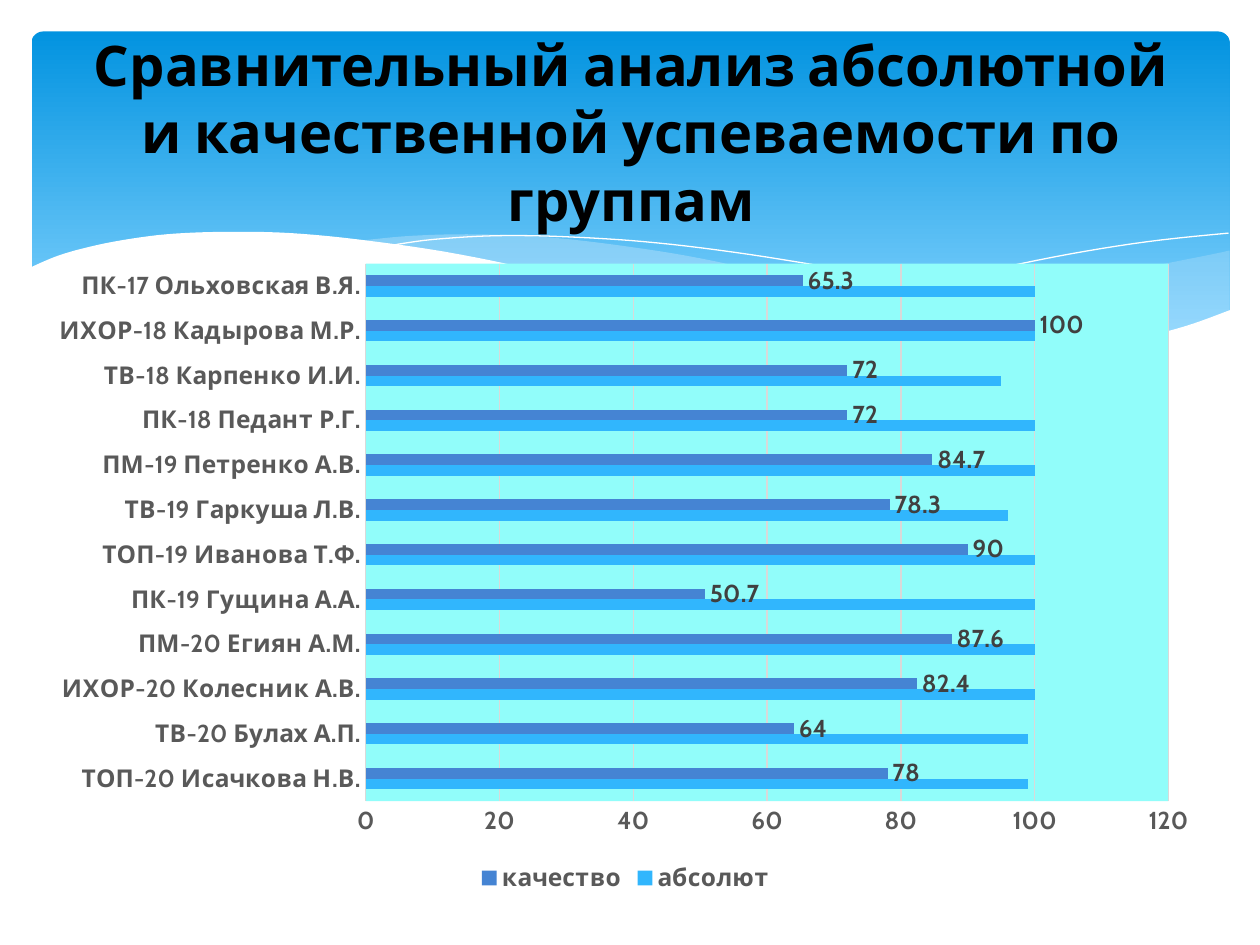
from lxml.etree import SubElement
from pptx import Presentation
from pptx.chart.data import CategoryChartData
from pptx.dml.color import RGBColor
from pptx.enum.chart import XL_CHART_TYPE, XL_LABEL_POSITION, XL_LEGEND_POSITION, XL_TICK_MARK
from pptx.enum.shapes import MSO_SHAPE
from pptx.enum.text import MSO_ANCHOR, PP_ALIGN
from pptx.oxml.ns import qn
from pptx.util import Pt


def rgb(code):
    return RGBColor.from_string(code)


def smooth(knots, steps=6):
    padded = [knots[0], *knots, knots[-1]]
    curve = [knots[0]]
    for a, b, c, d in zip(padded, padded[1:], padded[2:], padded[3:]):
        for step in range(1, steps + 1):
            t = step / steps
            curve.append(tuple(
                0.5 * (2 * q + (r - p) * t + (2 * p - 5 * q + 4 * r - s) * t ** 2
                       + (3 * q - p - 3 * r + s) * t ** 3)
                for p, q, r, s in zip(a, b, c, d)))
    return [(Pt(x), Pt(y)) for x, y in curve]


presentation = Presentation()
presentation.slide_width, presentation.slide_height = Pt(720), Pt(540)
slide = presentation.slides.add_slide(presentation.slide_layouts[5])
shapes = slide.shapes

banner = shapes.add_shape(MSO_SHAPE.ROUNDED_RECTANGLE, Pt(18), Pt(18), Pt(684.7), Pt(194.4))
banner.adjustments[0] = 0.034
banner.shadow.inherit = False
banner.line.fill.background()
banner.fill.gradient()
banner.fill.gradient_angle = 270
for stop, (position, color) in zip(banner.fill.gradient_stops, [(0, "0293E0"), (0.9, "83D3FE")]):
    stop.position = position
    stop.color.rgb = rgb(color)

right_crest = [(702, 143.3), (692, 145.5), (652, 153.5), (620, 160.5), (561, 174.3),
               (508, 185.2), (476, 190.8)]
right_trough = [(476, 190.8), (507, 195), (545, 198.8), (586, 200), (622, 198.8),
                (658, 194.5), (683, 188), (702.7, 177.8)]
middle_crest = [(643, 196.6), (603, 190.8), (533.5, 178.6), (453, 160), (410, 149.6),
                (370, 142.5), (318, 136), (273.6, 133.9), (236, 134.7), (206, 137.5)]
middle_trough = [(206, 137.5), (246, 143.3), (291, 152), (323, 159.8), (381.6, 172.8),
                 (432.7, 183.6), (479, 191.5), (520, 196.6), (556.5, 199.4),
                 (589, 200.2), (617, 199.4), (643, 196.6)]
left_thread = [(222.5, 140.4), (248, 136.8), (289, 134.6), (338, 136), (384, 139.7),
               (438, 146.9), (500, 157.7), (572, 173.5), (653, 195.8)]
right_thread = [(441, 185), (484, 173.5), (538.6, 160.5), (602, 146.9), (655, 138.2), (702, 133.2)]
front_crest = [(703.4, 177), (677, 186.5), (647.3, 193.7), (612, 198), (572.4, 199.2),
               (523, 197.3), (466, 190.8), (399.6, 180), (322, 158.4), (262.8, 145.4),
               (210, 137.5), (166, 133.2), (127, 132.5), (95, 133.9), (68.4, 137.5),
               (48, 141.8), (33, 146.2), (21, 151.2), (16.6, 153.4)]
front_base = [(16.6, 236.9), (703.4, 236.9)]

waves = [
    ([right_crest, right_trough, [(702.7, 143.3), (702, 143.3)]], "C6E7FC", 29),
    ([middle_crest, middle_trough], "C6E7FC", 40),
    ([left_thread], None, None),
    ([right_thread], None, None),
    ([front_crest, front_base], "FFFFFF", 100),
]
for curves, color, opacity in waves:
    outline = [point for curve in curves for point in smooth(curve)]
    builder = shapes.build_freeform(*outline[0])
    builder.add_line_segments(outline[1:], close=color is not None)
    wave = builder.convert_to_shape()
    wave.shadow.inherit = False
    if color is None:
        wave.fill.background()
        wave.line.color.rgb = rgb("FFFFFF")
        wave.line.width = Pt(0)
        continue
    wave.line.fill.background()
    wave.fill.solid()
    wave.fill.fore_color.rgb = rgb(color)
    if opacity < 100:
        tint = wave.fill._xPr.find(qn("a:solidFill"))[0]
        SubElement(tint, qn("a:alpha"), val=str(opacity * 1000))

heading = shapes.title
shapes._spTree.append(heading._element)
heading.left, heading.top, heading.width, heading.height = Pt(36.7), Pt(25.9), Pt(648), Pt(98.6)
heading.text_frame.text = "Сравнительный анализ абсолютной и качественной успеваемости по группам"
heading.text_frame.word_wrap = True
heading.text_frame.vertical_anchor = MSO_ANCHOR.MIDDLE
heading.text_frame.paragraphs[0].alignment = PP_ALIGN.CENTER

results = [
    ("ТОП-20 Исачкова Н.В.", 99, 78),
    ("ТВ-20 Булах А.П.", 99, 64),
    ("ИХОР-20 Колесник А.В.", 100, 82.4),
    ("ПМ-20 Егиян А.М.", 100, 87.6),
    ("ПК-19 Гущина А.А.", 100, 50.7),
    ("ТОП-19 Иванова Т.Ф.", 100, 90),
    ("ТВ-19 Гаркуша Л.В.", 96, 78.3),
    ("ПМ-19 Петренко А.В.", 100, 84.7),
    ("ПК-18 Педант Р.Г.", 100, 72),
    ("ТВ-18 Карпенко И.И.", 95, 72),
    ("ИХОР-18 Кадырова М.Р.", 100, 100),
    ("ПК-17 Ольховская В.Я.", 100, 65.3),
]
groups, absolute, quality = zip(*results)
performance = CategoryChartData()
performance.categories = groups
performance.add_series("абсолют", absolute)
performance.add_series("качество", quality)
chart = shapes.add_chart(XL_CHART_TYPE.BAR_CLUSTERED, Pt(20.2), Pt(143.3), Pt(674.6), Pt(370),
                         performance).chart
chart.has_title = False
chart.has_legend = True
chart.legend.position = XL_LEGEND_POSITION.BOTTOM
chart.legend.include_in_layout = False

bars = chart.plots[0]
bars.gap_width, bars.overlap = 219, 0
bars.vary_by_categories = False
for series, color in zip(bars.series, ["31B6FD", "4584D3"]):
    series.format.fill.solid()
    series.format.fill.fore_color.rgb = rgb(color)
    series.invert_if_negative = False
quality_labels = bars.series[1].data_labels
quality_labels.show_value = True
quality_labels.position = XL_LABEL_POSITION.OUTSIDE_END

group_axis, percent_axis = chart.category_axis, chart.value_axis
for axis in (group_axis, percent_axis):
    axis.major_tick_mark = axis.minor_tick_mark = XL_TICK_MARK.NONE
percent_axis.minimum_scale, percent_axis.maximum_scale, percent_axis.major_unit = 0, 120, 20
percent_axis.has_major_gridlines = True
percent_axis.format.line.fill.background()
for line in (group_axis.format.line, percent_axis.major_gridlines.format.line):
    line.color.rgb = rgb("D9D9D9")
    line.width = Pt(0.75)

fonts = [
    (heading.text_frame.paragraphs[0].runs[0].font, 32, "000000"),
    (chart.font, 14, "000000"),
    (group_axis.tick_labels.font, 14, "595959"),
    (percent_axis.tick_labels.font, 14, "595959"),
    (chart.legend.font, 14, "595959"),
    (quality_labels.font, 14, "404040"),
]
for font, size, color in fonts:
    for name, value in {"name": "Cabin", "size": Pt(size), "bold": True}.items():
        setattr(font, name, value)
    font.color.rgb = rgb(color)

plot_area = chart._chartSpace.chart.plotArea
backdrop = SubElement(plot_area, qn("c:spPr"))
SubElement(SubElement(backdrop, qn("a:solidFill")), qn("a:srgbClr"), val="91FDFA")
for old_layout in plot_area.findall(qn("c:layout")):
    plot_area.remove(old_layout)
layout = plot_area.makeelement(qn("c:layout"))
plot_area.insert(0, layout)
frame = SubElement(layout, qn("c:manualLayout"))
for tag, value in {"layoutTarget": "inner", "xMode": "edge", "yMode": "edge",
                   "x": 0.28, "y": 0.02, "w": 0.68, "h": 0.83}.items():
    SubElement(frame, qn(f"c:{tag}"), val=str(value))

presentation.save("out.pptx")
